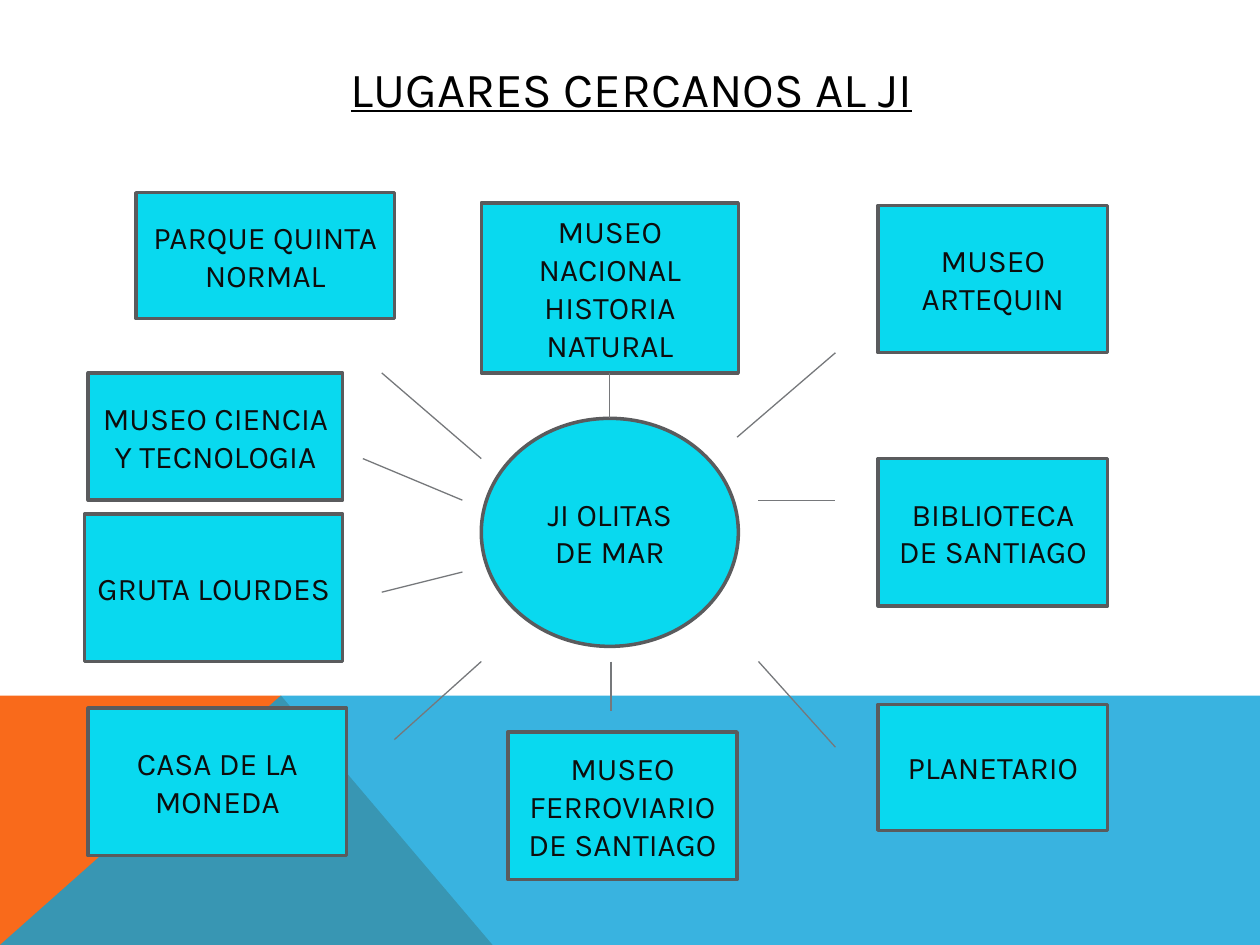
from lxml import etree
from pptx import Presentation
from pptx.dml.color import RGBColor
from pptx.enum.shapes import MSO_CONNECTOR, MSO_SHAPE
from pptx.enum.text import MSO_ANCHOR, PP_ALIGN
from pptx.oxml.ns import qn
from pptx.util import Inches, Pt

RECTANGLE, OVAL = MSO_SHAPE.RECTANGLE, MSO_SHAPE.OVAL
STRAIGHT = MSO_CONNECTOR.STRAIGHT
MIDDLE, CENTER = MSO_ANCHOR.MIDDLE, PP_ALIGN.CENTER
TOP_SITE, BOTTOM_SITE = 0, 2
FONT = "Karla"
COLORS = {
    "orange": "F96A1B", "blue": "08A1D9", "box": "09D9EF", "border": "5A5B5D",
    "spoke": "76787B", "title": "000000", "label": "0D0D0D",
}


def color(name):
    return RGBColor.from_string(COLORS[name])


def write_centered(shape, text, size, color_name):
    frame = shape.text_frame
    frame.word_wrap = True
    frame.vertical_anchor = MIDDLE
    paragraph = frame.paragraphs[0]
    paragraph.alignment = CENTER
    run = paragraph.add_run()
    run.text = text
    run.font.name = FONT
    run.font.size = Pt(size)
    run.font.color.rgb = color(color_name)
    return run


presentation = Presentation()
presentation.slide_width, presentation.slide_height = Inches(10), Inches(7.5)
slide = presentation.slides.add_slide(presentation.slide_layouts[6])
shapes = slide.shapes

# Footer bands, the blue one slightly see-through
bands = [
    ("orange", 100, [(0, 7.5), (0, 5.52), (2.23, 5.52), (3.91, 7.5)]),
    ("blue", 80, [(0, 7.5), (2.23, 5.52), (10, 5.52), (10, 7.5)]),
]
for color_name, opacity, points in bands:
    corners = [(Inches(x), Inches(y)) for x, y in points]
    builder = shapes.build_freeform(*corners[0])
    builder.add_line_segments(corners[1:], close=True)
    band = builder.convert_to_shape()
    band.shadow.inherit = False
    band.fill.solid()
    band.fill.fore_color.rgb = color(color_name)
    band.line.fill.background()
    if opacity < 100:
        fill_color = band.fill._xPr.find(qn("a:solidFill"))[0]
        etree.SubElement(fill_color, qn("a:alpha"), val=str(opacity * 1000))

title = shapes.add_textbox(Inches(0.9), Inches(0.4), Inches(8.22), Inches(0.6))
write_centered(title, "LUGARES CERCANOS AL JI", 28, "title").font.underline = True

# Kindergarten in the centre, nearby places around it
CENTRE, NATURAL_HISTORY = "JI OLITAS DE MAR", "MUSEO NACIONAL HISTORIA NATURAL"
places = [
    (CENTRE, OVAL, 3.82, 3.32, 2.04, 1.81),
    ("GRUTA LOURDES", RECTANGLE, 0.67, 4.08, 2.05, 1.17),
    ("PARQUE QUINTA NORMAL", RECTANGLE, 1.08, 1.53, 2.05, 1),
    ("BIBLIOTECA DE SANTIAGO", RECTANGLE, 6.97, 3.64, 1.82, 1.17),
    ("PLANETARIO", RECTANGLE, 6.97, 5.59, 1.82, 1),
    ("MUSEO ARTEQUIN", RECTANGLE, 6.97, 1.63, 1.82, 1.17),
    ("CASA DE LA MONEDA", RECTANGLE, 0.7, 5.62, 2.05, 1.17),
    ("MUSEO FERROVIARIO DE SANTIAGO", RECTANGLE, 4.03, 5.81, 1.82, 1.17),
    (NATURAL_HISTORY, RECTANGLE, 3.82, 1.61, 2.04, 1.35),
    ("MUSEO CIENCIA Y TECNOLOGIA", RECTANGLE, 0.7, 2.96, 2.02, 1.01),
]
place_shapes = {}
for name, kind, *box in places:
    shape = shapes.add_shape(kind, *[Inches(length) for length in box])
    shape.shadow.inherit = False
    shape.fill.solid()
    shape.fill.fore_color.rgb = color("box")
    shape.line.color.rgb = color("border")
    shape.line.width = Pt(2)
    write_centered(shape, name, 18, "label")
    place_shapes[name] = shape

# Spokes; the first one joins two shapes
spokes = [
    (4.84, 2.96, 4.84, 3.32),
    (3.03, 2.96, 3.82, 3.64),
    (4.85, 5.25, 4.85, 5.64),
    (3.13, 5.87, 3.82, 5.25),
    (6.63, 2.8, 5.85, 3.47),
    (3.03, 4.7, 3.67, 4.54),
    (6.02, 3.97, 6.63, 3.97),
    (6.02, 5.25, 6.63, 5.93),
    (2.88, 3.64, 3.67, 3.97),
]
connectors = []
for ends in spokes:
    connector = shapes.add_connector(STRAIGHT, *[Inches(length) for length in ends])
    connector.line.color.rgb = color("spoke")
    connector.line.width = Pt(0.75)
    etree.SubElement(connector._element.spPr, qn("a:effectLst"))
    connectors.append(connector)
connectors[0].begin_connect(place_shapes[NATURAL_HISTORY], BOTTOM_SITE)
connectors[0].end_connect(place_shapes[CENTRE], TOP_SITE)

presentation.save("out.pptx")
